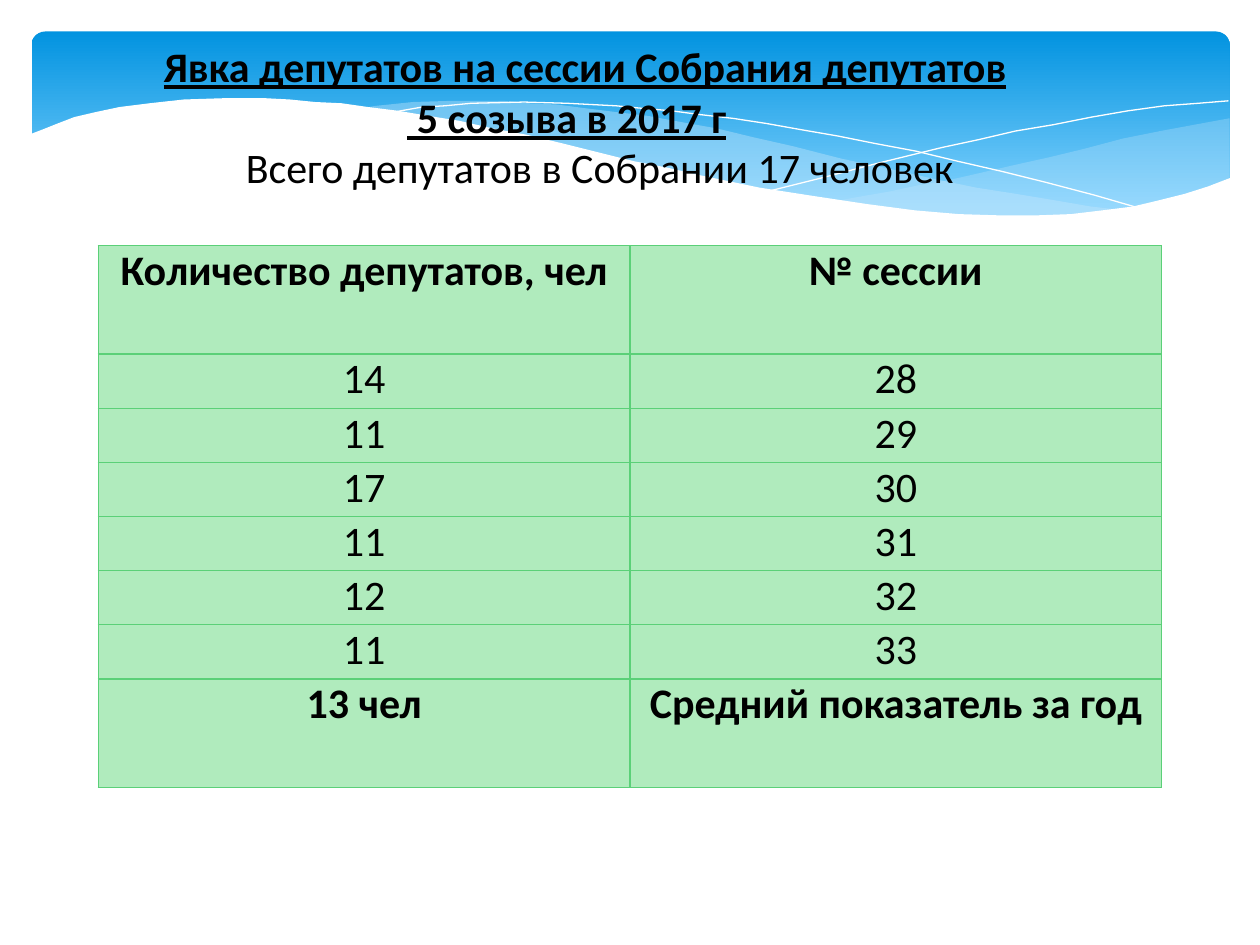
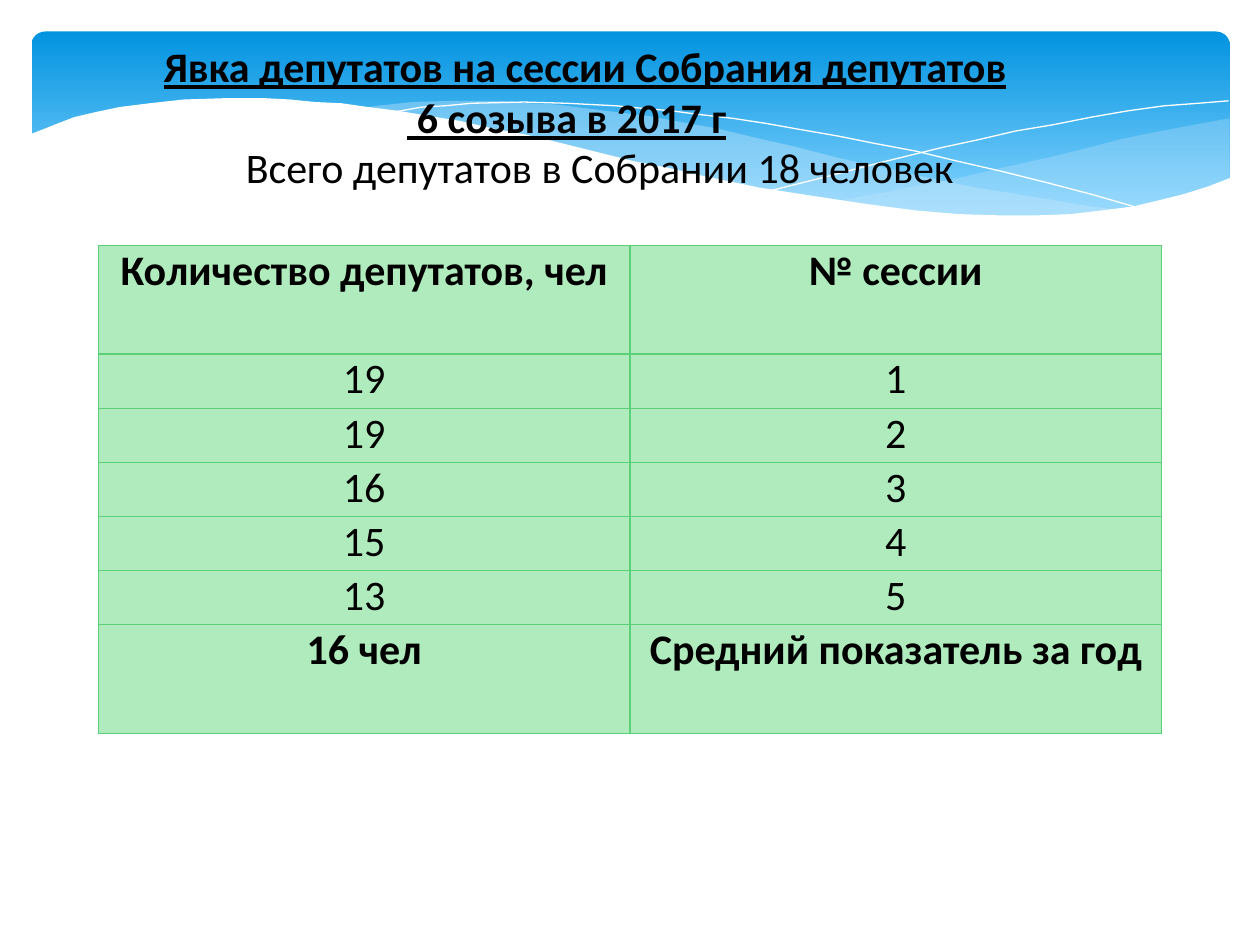
from lxml.etree import SubElement
from pptx import Presentation
from pptx.dml.color import RGBColor
from pptx.enum.shapes import MSO_SHAPE
from pptx.enum.text import MSO_ANCHOR, MSO_AUTO_SIZE, PP_ALIGN
from pptx.oxml.ns import qn
from pptx.util import Pt

PX = 9144  # 100 px to the inch
FONT = "Calibri"
COLORS = {
    "sky_top": "0293E0",
    "sky_bottom": "83D3FE",
    "wave": "C6E7FC",
    "white": "FFFFFF",
    "text": "000000",
    "cell": "B0EBBD",
    "border": "5BD078",
}

# Waves of the header band: points, closed, opacity in percent
RIGHT_WAVE = [
    (975, 94), (948, 99), (921, 104), (891, 110), (861, 118), (832, 125), (805, 131),
    (779, 137), (753, 143), (729, 147), (706, 152), (683, 156), (661, 160), (691, 164),
    (719, 167), (745, 169), (769, 171), (792, 172), (835, 172), (854, 170), (872, 169),
    (889, 166), (905, 163), (921, 160), (935, 156), (949, 152), (963, 147), (976, 141),
    (976, 94)]
MIDDLE_WAVE = [
    (893, 167), (866, 164), (837, 159), (807, 154), (775, 149), (741, 142), (706, 134),
    (668, 126), (629, 116), (598, 109), (569, 102), (541, 97), (514, 92), (489, 89),
    (465, 86), (442, 83), (420, 82), (399, 80), (361, 80), (328, 81), (299, 84),
    (286, 86), (323, 90), (362, 97), (404, 106), (449, 116), (491, 126), (530, 135),
    (566, 143), (601, 150), (634, 156), (665, 161), (695, 165), (722, 168), (748, 170),
    (773, 172), (796, 173), (828, 173), (857, 171), (876, 169)]
LONG_LINE = [
    (309, 90), (318, 88), (335, 85), (353, 84), (374, 82), (416, 81), (450, 82),
    (489, 84), (510, 86), (533, 88), (556, 91), (582, 94), (608, 98), (636, 103),
    (665, 108), (695, 114), (727, 120), (760, 128), (795, 136), (831, 145), (869, 155),
    (907, 166)]
RISING_LINE = [
    (613, 151), (653, 141), (695, 130), (748, 117), (776, 111), (806, 104), (836, 99),
    (866, 93), (895, 88), (924, 84), (951, 82), (975, 80)]
WHITE_WAVE = [
    (977, 141), (959, 148), (940, 154), (920, 159), (899, 164), (875, 167), (850, 170),
    (823, 171), (793, 171), (761, 170), (726, 167), (688, 162), (648, 156), (603, 149),
    (579, 144), (555, 139), (529, 133), (503, 128), (475, 121), (447, 114), (418, 107),
    (391, 102), (365, 96), (340, 92), (316, 88), (292, 85), (271, 82), (250, 81),
    (230, 79), (211, 78), (177, 78), (146, 79), (119, 82), (95, 85), (76, 89), (59, 93),
    (46, 98), (36, 102), (23, 107), (23, 224), (977, 224)]
HEADER_CURVES = [
    (RIGHT_WAVE, "wave", 29), (MIDDLE_WAVE, "wave", 40),
    (LONG_LINE, None, 100), (RISING_LINE, None, 100), (WHITE_WAVE, "white", 100)]

# Convocation, seats, (deputies present, session), yearly average
ATTENDANCE = [
    (5, 17, [(14, 28), (11, 29), (17, 30), (11, 31), (12, 32), (11, 33)], 13),
    (6, 18, [(19, 1), (19, 2), (16, 3), (15, 4), (13, 5)], 16),
]


def rgb(name):
    return RGBColor.from_string(COLORS[name])


def write(paragraph, text, bold=False, underline=False):
    paragraph.alignment = PP_ALIGN.CENTER
    run = paragraph.add_run()
    run.text = text
    run.font.name = FONT
    run.font.size = Pt(24)
    run.font.bold = bold
    run.font.underline = underline
    run.font.color.rgb = rgb("text")


prs = Presentation()
prs.slide_width, prs.slide_height = 1000 * PX, 750 * PX
layout = prs.slide_layouts[5]
slides = [prs.slides.add_slide(layout) for _ in ATTENDANCE]

# Header band, drawn once and moved to the shared layout
canvas = slides[0].shapes
band = canvas.add_shape(MSO_SHAPE.ROUNDED_RECTANGLE, 25 * PX, 25 * PX, 951 * PX, 156 * PX)
band.adjustments[0] = 0.07
band.fill.gradient()
band.fill.gradient_angle = 270
for stop, color, position in zip(band.fill.gradient_stops, ("sky_top", "sky_bottom"), (0, 0.9)):
    stop.color.rgb = rgb(color)
    stop.position = position
band.line.fill.background()
header = [band]

for points, color, opacity in HEADER_CURVES:
    builder = canvas.build_freeform(*points[0], scale=PX)
    builder.add_line_segments(points[1:], close=color is not None)
    curve = builder.convert_to_shape()
    if color:
        curve.fill.solid()
        curve.fill.fore_color.rgb = rgb(color)
        curve.line.fill.background()
        if opacity < 100:
            tint = curve._element.spPr.find(qn("a:solidFill"))[0]
            SubElement(tint, qn("a:alpha"), val=str(opacity * 1000))
    else:
        curve.fill.background()
        curve.line.color.rgb = rgb("white")
        curve.line.width = 0
    header.append(curve)

for depth, part in enumerate(header, start=2):
    part.shadow.inherit = False
    layout.shapes._spTree.insert(depth, part._element)

for slide, (convocation, seats, sessions, average) in zip(slides, ATTENDANCE):
    # Title
    title = slide.shapes.title
    title.left, title.top, title.width, title.height = 0, 30 * PX, 900 * PX, 125 * PX
    frame = title.text_frame
    frame.auto_size = MSO_AUTO_SIZE.NONE
    frame.vertical_anchor = MSO_ANCHOR.MIDDLE
    heading = [
        ("Явка депутатов на сессии Собрания депутатов", True, 29),
        (f" {convocation} созыва в 2017 г", True, 0),
        (f"Всего депутатов в Собрании {seats} человек", False, 52),
    ]
    for index, (text, strong, indent) in enumerate(heading):
        paragraph = frame.add_paragraph() if index else frame.paragraphs[0]
        write(paragraph, text, bold=strong, underline=strong)
        paragraph._p.get_or_add_pPr().set("marL", str(indent * PX))

    # Attendance table
    rows = [("Количество депутатов, чел", "№ сессии"), *sessions,
            (f"{average} чел", "Средний показатель за год")]
    heights = [86] + [43] * len(sessions) + [86]
    table = slide.shapes.add_table(
        len(rows), 2, 78 * PX, 195 * PX, 844 * PX, sum(heights) * PX).table
    for column in table.columns:
        column.width = 422 * PX
    for row, height, values in zip(table.rows, heights, rows):
        row.height = height * PX
        for cell, value in zip(row.cells, values):
            cell.margin_left = cell.margin_right = 7 * PX
            cell.margin_top = cell.margin_bottom = 0
            write(cell.text_frame.paragraphs[0], str(value), bold=height == 86)
            properties = cell._tc.get_or_add_tcPr()
            for side in ("lnL", "lnR", "lnT", "lnB"):
                border = SubElement(properties, qn(f"a:{side}"), w=str(Pt(0.75)))
                solid = SubElement(border, qn("a:solidFill"))
                SubElement(solid, qn("a:srgbClr"), val=COLORS["border"])
            cell.fill.solid()
            cell.fill.fore_color.rgb = rgb("cell")

prs.save("out.pptx")
